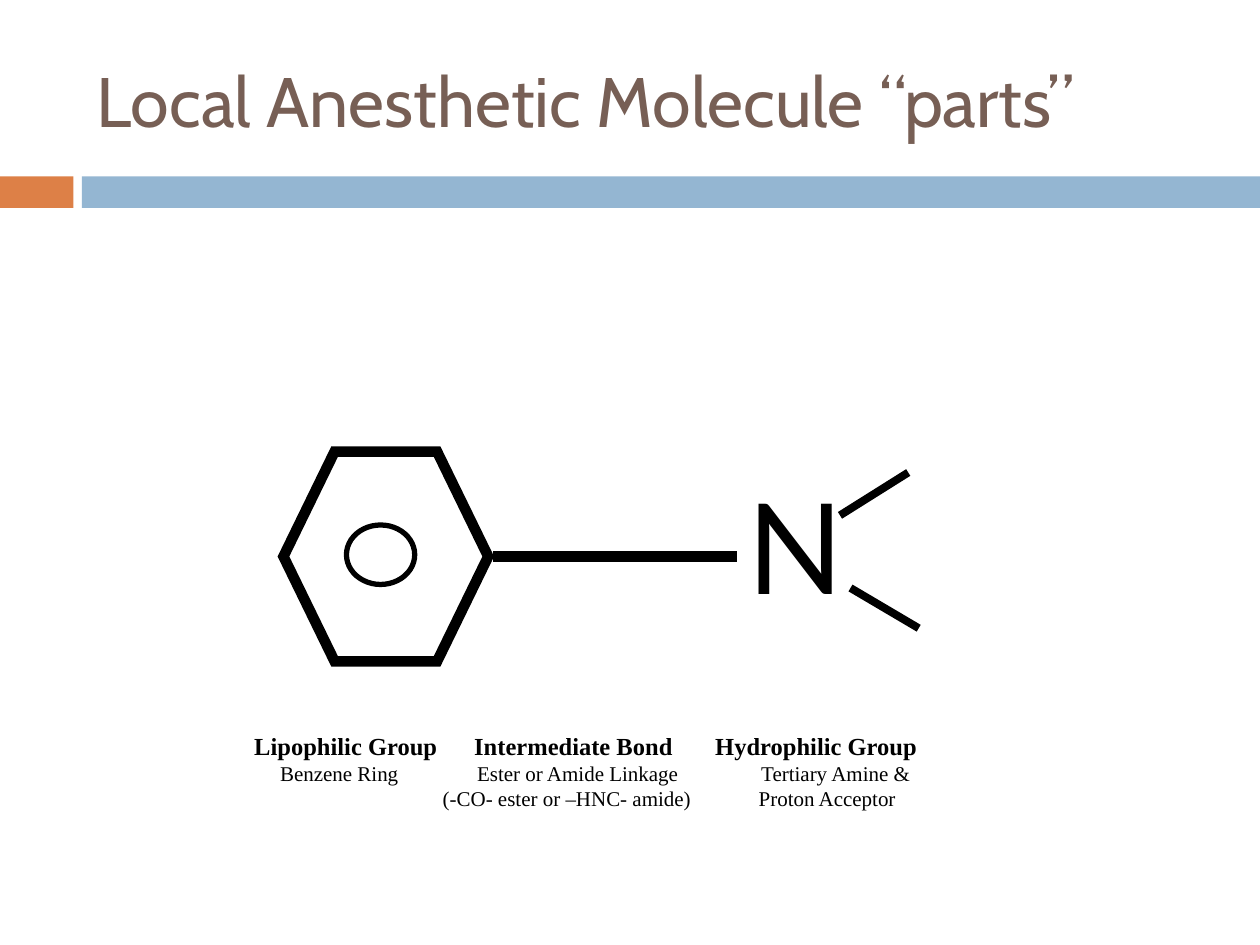
from lxml.etree import SubElement
from pptx import Presentation
from pptx.dml.color import RGBColor
from pptx.enum.shapes import MSO_CONNECTOR, MSO_SHAPE
from pptx.enum.text import MSO_ANCHOR as Anchor, PP_ALIGN as Align
from pptx.oxml.ns import qn
from pptx.util import Pt

COLORS = {"title": "775F55", "accent": "DD8047", "band": "94B6D2",
          "ink": "000000", "paper": "FFFFFF"}

TITLE = "Local Anesthetic Molecule “parts”"
BARS = [("accent", 0, 42), ("band", 46.8, 673.2)]  # colour, left, width
BAR_TOP, BAR_HEIGHT = 100.8, 18

# preset, (left, top, width, height), outline width
RINGS = [
    (MSO_SHAPE.HEXAGON, (162, 258, 117, 120), 6),
    (MSO_SHAPE.FLOWCHART_CONNECTOR, (198, 300, 39, 34), 3),
]
# start, end, line width
BONDS = [
    ((282, 318), (421, 318), 6),
    ((486, 336), (525, 359), 4.5),
    ((480, 294.5), (519, 270), 4.5),
]
# size, bold, [(tab position, text)]
LABELS = [
    (14, True, [(42.2, "Lipophilic Group"), (167.9, "Intermediate Bond"),
                (305.6, "Hydrophilic Group")]),
    (12, False, [(57, "Benzene Ring"), (169.6, "Ester or Amide Linkage"),
                 (331.9, "Tertiary Amine &")]),
    (12, False, [(149.9, "(-CO- ester or –HNC- amide)"),
                 (330.5, "Proton Acceptor")]),
]


def rgb(name):
    return RGBColor.from_string(COLORS[name])


def add_span(para, text, font, size, color="ink", bold=False):
    span = para.add_run()
    span.text = text
    span.font.name, span.font.size, span.font.bold = font, Pt(size), bold
    span.font.color.rgb = rgb(color)


def add_filled(slide, preset, bounds, fill):
    shape = slide.shapes.add_shape(preset, *map(Pt, bounds))
    shape.shadow.inherit = False
    shape.fill.solid()
    shape.fill.fore_color.rgb = rgb(fill)
    shape.line.fill.background()
    return shape


def set_line(shape, width):
    shape.line.color.rgb = rgb("ink")
    shape.line.width = Pt(width)


def add_text_box(slide, bounds, anchor):
    box = slide.shapes.add_textbox(*map(Pt, bounds))
    box.text_frame.word_wrap = True
    box.text_frame.vertical_anchor = anchor
    return box.text_frame


def set_tabs(para, positions):
    tabs = SubElement(para._p.get_or_add_pPr(), qn("a:tabLst"))
    for position in positions:
        SubElement(tabs, qn("a:tab"), pos=str(int(Pt(position))), algn="l")


deck = Presentation()
deck.slide_width, deck.slide_height = Pt(720), Pt(540)
slide = deck.slides.add_slide(deck.slide_layouts[5])

for color, left, width in BARS:
    add_filled(slide, MSO_SHAPE.RECTANGLE,
               (left, BAR_TOP, width, BAR_HEIGHT), color)

title = slide.shapes.title
title.left, title.top, title.width, title.height = map(Pt, (48, 18, 642, 78))
title.text_frame.vertical_anchor = Anchor.MIDDLE
heading = title.text_frame.paragraphs[0]
heading.alignment = Align.LEFT
add_span(heading, TITLE, "Cabin", 40, "title")

for preset, bounds, width in RINGS:
    ring = add_filled(slide, preset, bounds, "paper")
    set_line(ring, width)
    SubElement(ring.line._get_or_add_ln(), qn("a:miter"), lim="800000")

for start, end, width in BONDS:
    bond = slide.shapes.add_connector(MSO_CONNECTOR.STRAIGHT,
                                      *map(Pt, start + end))
    set_line(bond, width)
    SubElement(bond._element.spPr, qn("a:effectLst"))

nitrogen = add_text_box(slide, (420, 264, 60, 181.5), Anchor.TOP)
add_span(nitrogen.paragraphs[0], "N", "Lato", 72)

labels = add_text_box(slide, (96, 414, 474, 53.5), Anchor.MIDDLE)
for index, (size, bold, entries) in enumerate(LABELS):
    para = labels.add_paragraph() if index else labels.paragraphs[0]
    set_tabs(para, [position for position, _ in entries])
    for _, text in entries:
        add_span(para, "\t" + text, "Times New Roman", size, bold=bold)

deck.save("out.pptx")
